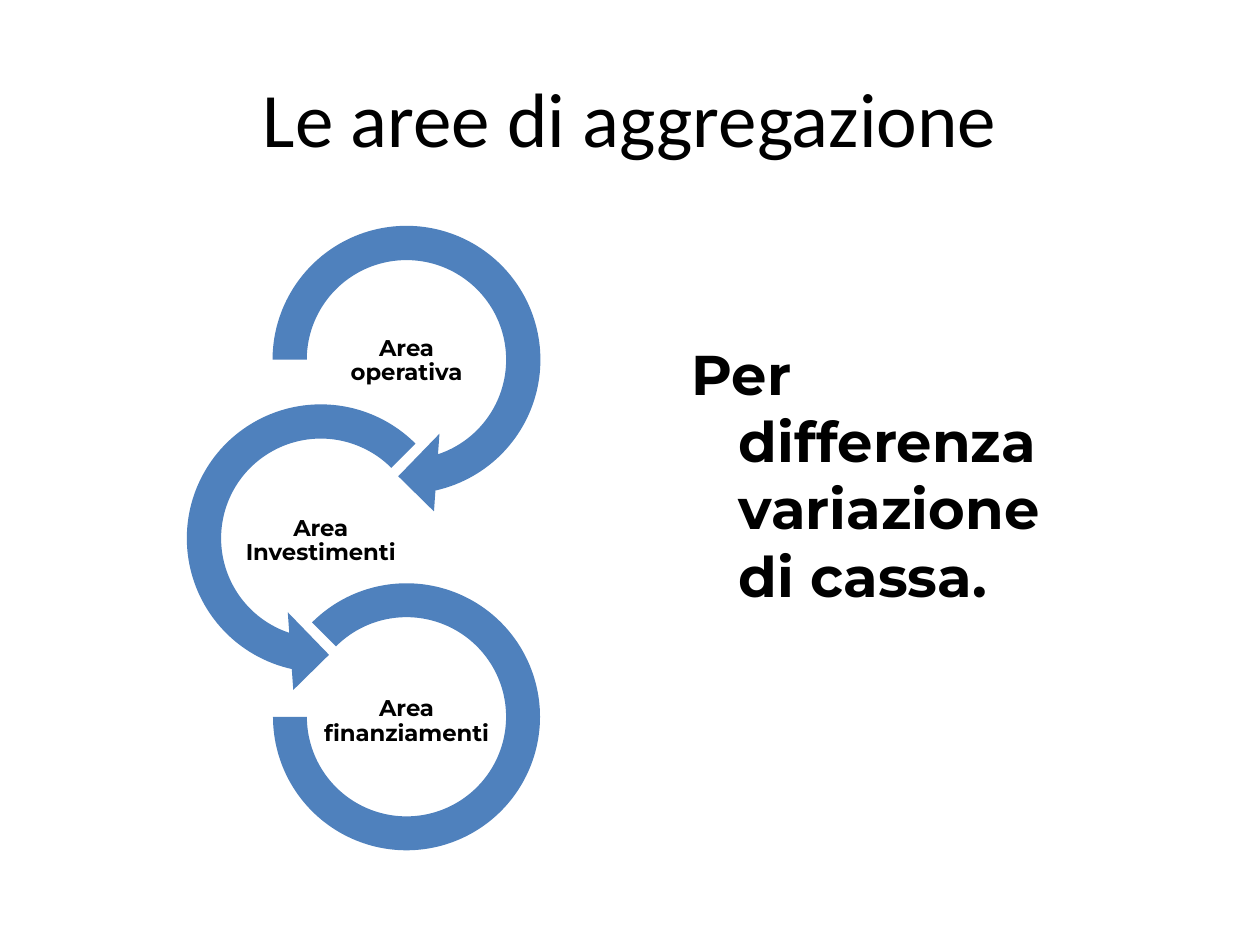
from pptx import Presentation
from pptx.dml.color import RGBColor
from pptx.enum.shapes import MSO_SHAPE
from pptx.enum.text import MSO_ANCHOR, PP_ALIGN
from pptx.oxml.ns import qn
from pptx.util import Pt

COLORS = {"text": "000000", "ring": "4F81BD"}
TITLE_FONT = {"name": "Calibri", "size": Pt(44), "bold": False}
BODY_FONT = {"name": "Montserrat", "size": Pt(32), "bold": True}
LABEL_FONT = {"name": "Montserrat", "size": Pt(13), "bold": True}

AREAS = [
    ("Area operativa", MSO_SHAPE.CIRCULAR_ARROW, 178, 138,
     (0.11, 11.42, 45, 108, 0.125)),
    ("Area Investimenti", MSO_SHAPE.LEFT_CIRCULAR_ARROW, 178, 89,
     (0.11, 11.42, 63, 189, 0.125)),
    ("Area finanziamenti", MSO_SHAPE.BLOCK_ARC, 152.6, 138,
     (135, 108, 0.127)),
]


def set_values(target, values):
    for name, value in values.items():
        setattr(target, name, value)


def place(item, box):
    names = ("left", "top", "width", "height")
    set_values(item, dict(zip(names, map(Pt, box))))


def write(frame, text, font, frame_format, para_format):
    set_values(frame, {"word_wrap": True, **frame_format})
    para = frame.paragraphs[0]
    set_values(para, para_format)
    span = para.add_run()
    span.text = text
    set_values(span.font, font)
    span.font.color.rgb = RGBColor.from_string(COLORS["text"])
    return para


def add_title(page, box):
    title = page.shapes.title
    place(title, box)
    write(title.text_frame, "Le aree di aggregazione", TITLE_FONT,
          {"vertical_anchor": MSO_ANCHOR.MIDDLE},
          {"alignment": PP_ALIGN.CENTER})


def add_statement(page, box):
    body = page.placeholders[1]
    place(body, box)
    para = write(body.text_frame, "Per differenza variazione di cassa.", BODY_FONT,
                 {"vertical_anchor": MSO_ANCHOR.TOP, "margin_top": Pt(94)},
                 {"space_before": Pt(0)})
    properties = para._p.get_or_add_pPr()
    set_values(properties, {"marL": 0, "indent": 0})
    properties.append(properties.makeelement(qn("a:buNone"), {}))


def add_ring(group, kind, size, center_x, center_y, adjustments):
    box = (center_x - size / 2, center_y - size / 2, size, size)
    ring = group.shapes.add_shape(kind, *map(Pt, box))
    for index, value in enumerate(adjustments):
        ring.adjustments[index] = value
    ring.shadow.inherit = False
    ring.fill.solid()
    ring.fill.fore_color.rgb = RGBColor.from_string(COLORS["ring"])
    ring.line.fill.background()


def add_label(group, text, center_x, center_y):
    width, height = 98.6, 49.7
    box = (center_x - width / 2, center_y - height / 2, width, height)
    label = group.shapes.add_textbox(*map(Pt, box))
    margins = {f"margin_{side}": Pt(0.7) for side in ("left", "top", "right", "bottom")}
    write(label.text_frame, text, LABEL_FONT,
          {"vertical_anchor": MSO_ANCHOR.MIDDLE, **margins},
          {"alignment": PP_ALIGN.CENTER, "line_spacing": 0.9, "space_after": Pt(4.5)})


def add_area_chain(page, left, top):
    group = page.shapes.add_group_shape()
    for index, (text, kind, size, offset, adjustments) in enumerate(AREAS):
        center_x = left + offset
        add_ring(group, kind, size, center_x, top + 89 + 102 * index, adjustments)
        add_label(group, text, center_x, top + 89.7 + 103 * index)


def main():
    deck = Presentation()
    set_values(deck, {"slide_width": Pt(720), "slide_height": Pt(540)})
    page = deck.slides.add_slide(deck.slide_layouts[1])
    add_title(page, (36, 21.6, 648, 90))
    add_statement(page, (388, 100, 227, 356.4))
    add_area_chain(page, 94.3, 116.6)
    deck.save("out.pptx")


if __name__ == "__main__":
    main()
